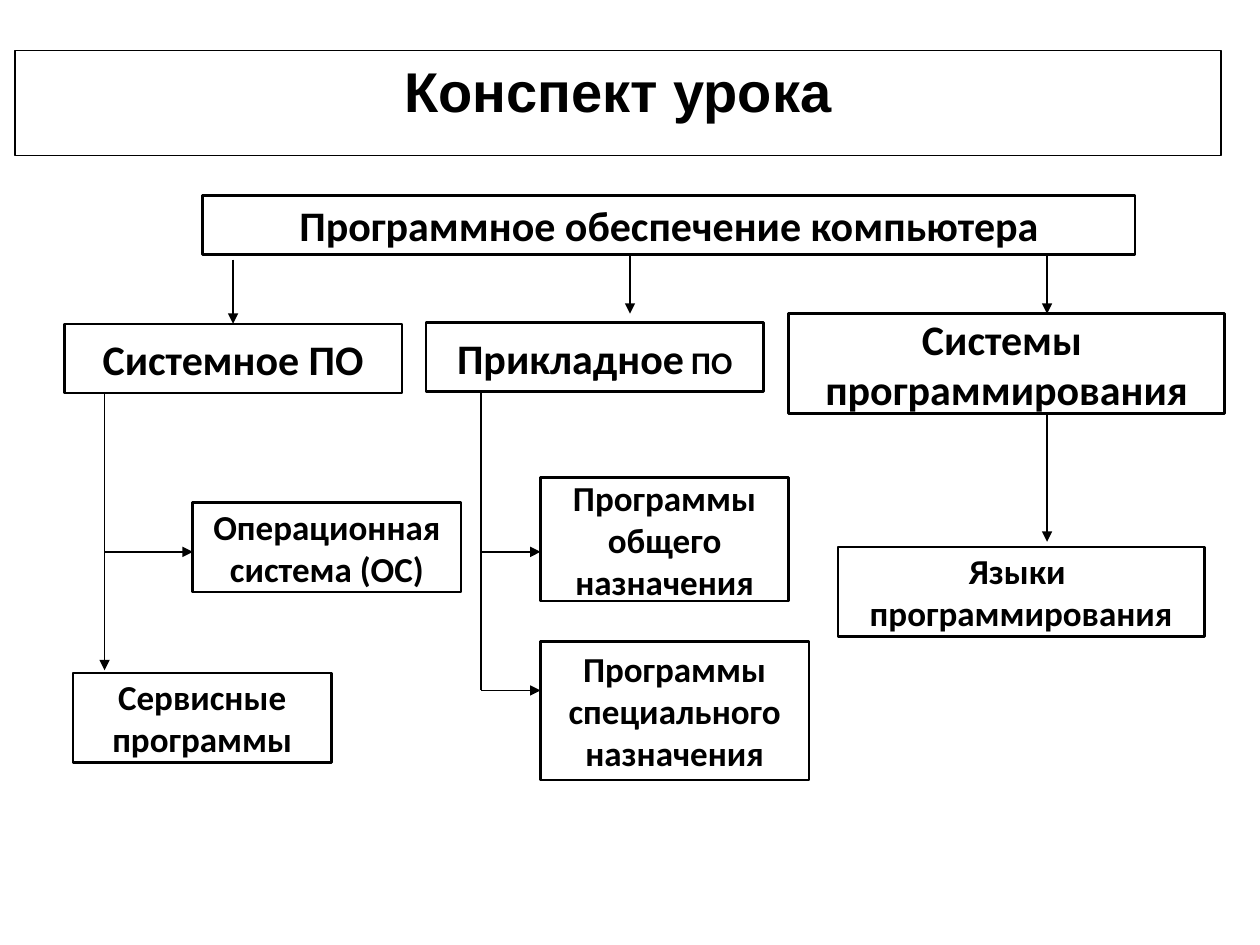
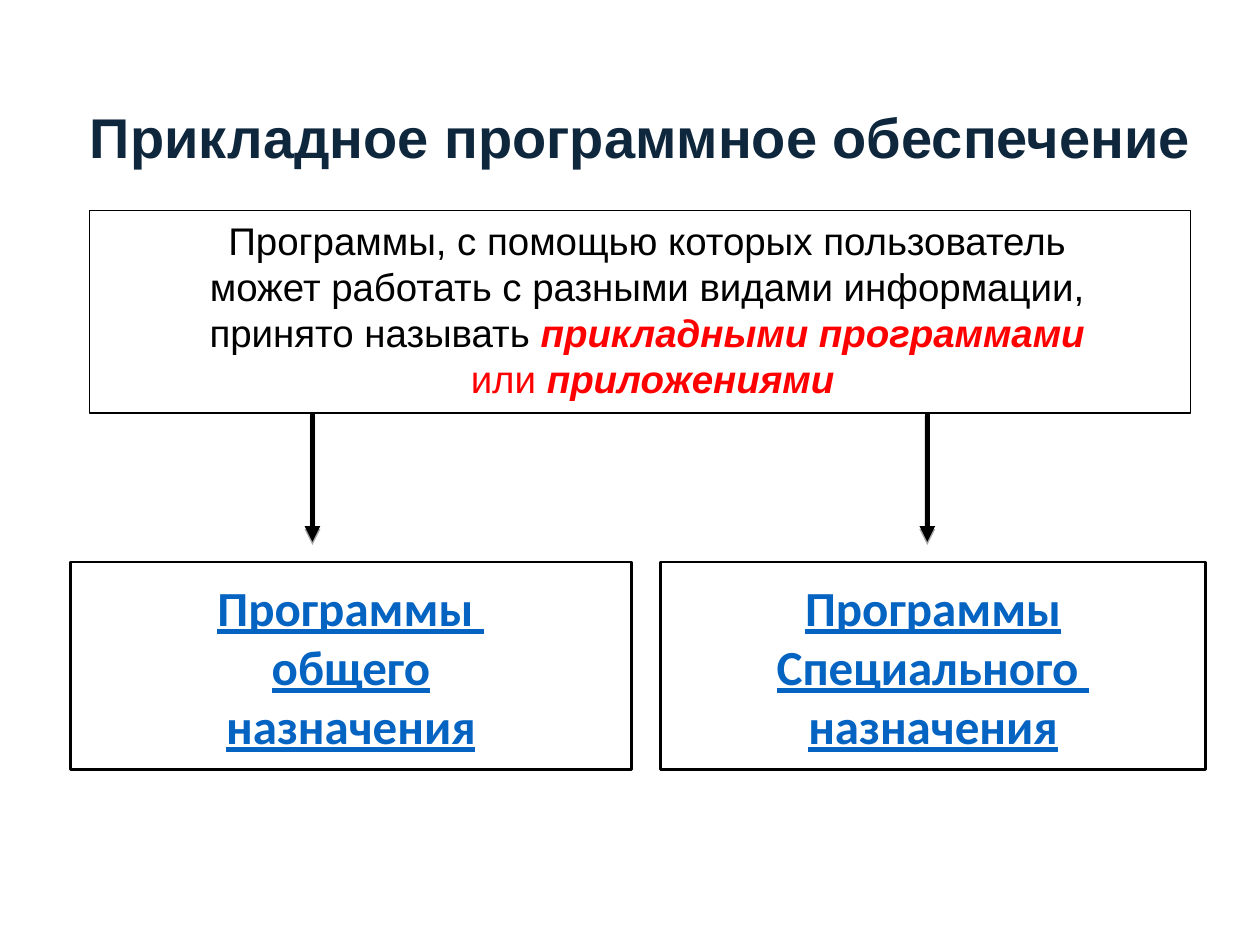
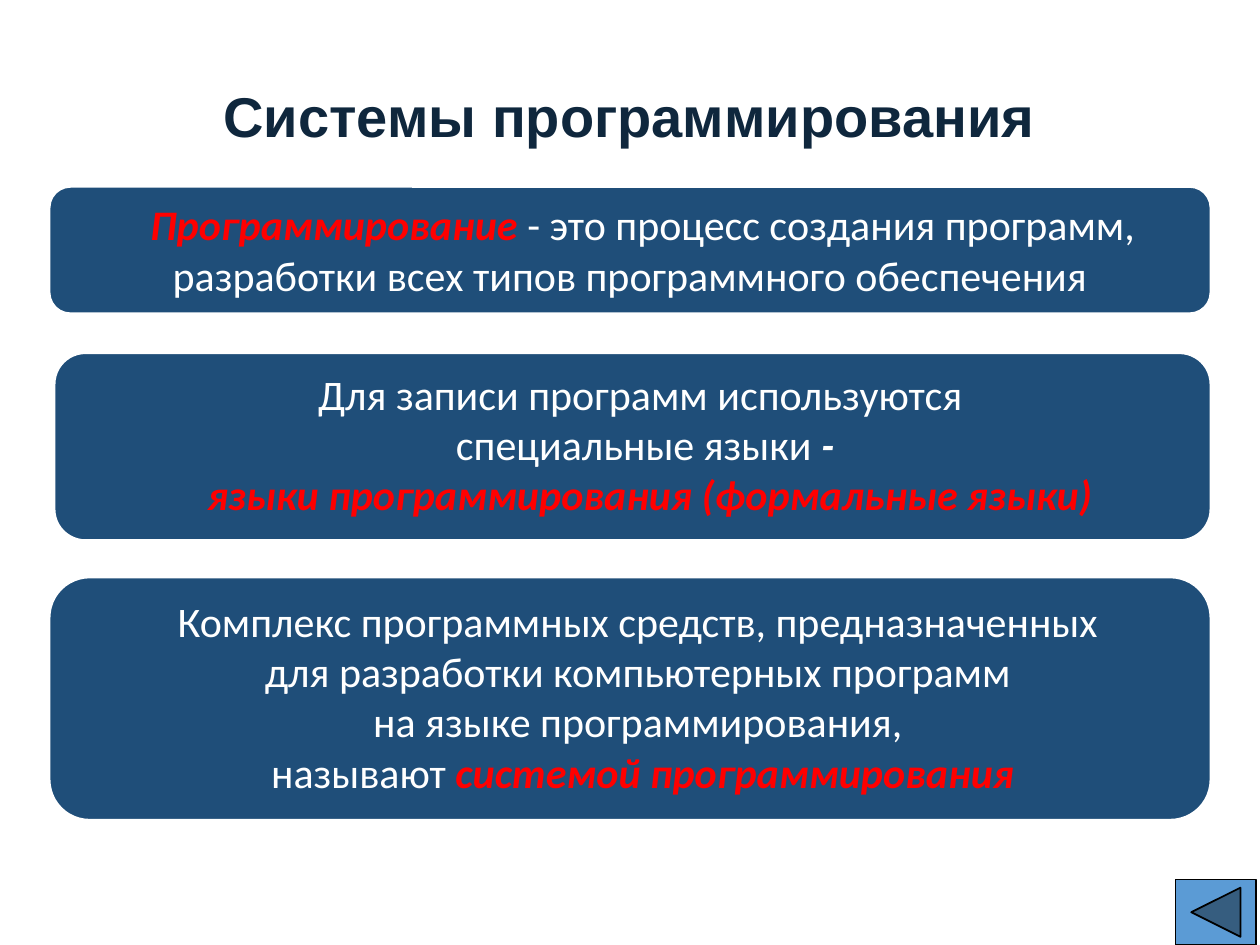
import pptx
import pptx.dml.color
import pptx.enum.shapes
import pptx.enum.text
import pptx.oxml
import pptx.oxml.ns
import pptx.util
from lxml import etree

WIDE, HIGH = pptx.util.Inches(10), pptx.util.Inches(7.5)
COLS, ROWS = 100, 75
BLACK, WHITE, RED = "000000", "FFFFFF", "FF0000"
NAVY, LINK, PANEL, BUTTON = "0F273D", "0563C1", "1F4E79", "5B9BD5"
KINDS = pptx.enum.shapes.MSO_SHAPE
FIT = pptx.enum.text.MSO_AUTO_SIZE
ANCHOR = pptx.enum.text.MSO_ANCHOR
CENTER = pptx.enum.text.PP_ALIGN.CENTER

TITLE = {"name": "Arial", "size": 32, "bold": True, "color": NAVY}
HEAD = {"name": "Calibri", "size": 24, "bold": True, "color": BLACK}
LEAF = {**HEAD, "size": 20}
JUMP = {**HEAD, "size": 28, "color": LINK, "underline": True}
BODY = {"name": "Arial", "size": 22, "color": BLACK}
NOTE = {"name": "Calibri", "size": 24, "color": WHITE}
TERM = {"color": RED, "bold": True, "italic": True}

FIXED = {"word_wrap": False, "vertical_anchor": ANCHOR.MIDDLE}
FLOW = {"word_wrap": True, "vertical_anchor": ANCHOR.TOP,
        "auto_size": FIT.SHAPE_TO_FIT_TEXT}


def col(n):
    return round(WIDE * n / COLS)


def row(n):
    return round(HIGH * n / ROWS)


def shade(code):
    return pptx.dml.color.RGBColor.from_string(code)


def apply(target, values):
    for key, value in values.items():
        setattr(target, key, value)


def style(font, look):
    font.color.rgb = shade(look["color"])
    apply(font, {key: value for key, value in look.items() if key != "color"}
          | {"size": pptx.util.Pt(look["size"])})


def edge(line, width, color=BLACK):
    line.color.rgb = shade(color)
    line.width = pptx.util.Pt(width)


def place(shape, x, y, w, h):
    apply(shape, {"left": col(x), "top": row(y), "width": col(w), "height": row(h)})


def write(shape, lines, look, frame, indent=0):
    body = shape.text_frame
    apply(body, frame)
    for i, line in enumerate(lines):
        para = body.paragraphs[0] if i == 0 else body.add_paragraph()
        para.alignment = CENTER
        if indent:
            para._p.get_or_add_pPr().set("indent", str(col(indent)))
        for part in [line] if isinstance(line, str) else line:
            words, extra = (part, {}) if isinstance(part, str) else part
            run = para.add_run()
            run.text = words
            style(run.font, {**look, **extra})


def box(slide, spot, width, fill=None, color=BLACK, kind=KINDS.RECTANGLE):
    x, y, w, h = spot
    shape = slide.shapes.add_shape(kind, col(x), row(y), col(w), row(h))
    shape.shadow.inherit = False
    if fill:
        shape.fill.solid()
        shape.fill.fore_color.rgb = shade(fill)
    else:
        shape.fill.background()
    edge(shape.line, width, color)
    return shape


def frame(slide, spot, lines, look):
    write(box(slide, spot, 1.5), lines, look, FIXED)


def link(slide, x1, y1, x2, y2, arrow=True, width=1, shadow=False):
    line = slide.shapes.add_connector(
        pptx.enum.shapes.MSO_CONNECTOR.STRAIGHT, col(x1), row(y1), col(x2), row(y2))
    edge(line.line, width)
    name = pptx.oxml.ns.qn
    props = line._element.spPr
    if arrow:
        etree.SubElement(props.find(name("a:ln")), name("a:tailEnd"), type="triangle")
    glow = etree.SubElement(props, name("a:effectLst"))
    if shadow:
        cast = etree.SubElement(glow, name("a:outerShdw"), blurRad="0",
                                dist=str(pptx.util.Pt(1.8)), dir="5400000", rotWithShape="0")
        tone = etree.SubElement(cast, name("a:srgbClr"), val=BLACK)
        etree.SubElement(tone, name("a:alpha"), val="35000")


def start(deck, text, spot, color=NAVY, wrap=False):
    slide = deck.slides.add_slide(deck.slide_layouts[5])
    title = slide.shapes.title
    place(title, *spot)
    write(title, [text], {**TITLE, "color": color}, {**FLOW, "word_wrap": wrap})
    return slide


def outline(deck):
    slide = start(deck, "Конспект урока", (1.2, 4, 95.7, 6.4), BLACK, True)
    edge(slide.shapes.title.line, 0.75)
    frame(slide, (16.1, 15.5, 74, 4.7), ["Программное обеспечение компьютера"], HEAD)
    frame(slide, (5.1, 25.7, 26.8, 5.5), ["Системное ПО"], HEAD)
    frame(slide, (33.8, 25.6, 26.8, 5.5), [["Прикладное", (" ПО", {"size": 18})]], HEAD)
    frame(slide, (62.6, 24.9, 34.6, 7.9), ["Системы ", "программирования"], HEAD)
    leaves = [
        ((15.3, 39.9, 21.3, 7.1), ["Операционная", "система (ОС)"]),
        ((5.8, 53.4, 20.5, 7.1), ["Сервисные", "программы"]),
        ((42.9, 37.9, 19.7, 9.8), ["Программы", "общего", "назначения"]),
        ((42.9, 50.9, 21.3, 11), ["Программы", "специального", "назначения"]),
        ((66.5, 43.4, 29.1, 7.1), ["Языки ", "программирования"]),
    ]
    for spot, lines in leaves:
        frame(slide, spot, lines, LEAF)
    for x, top, end in [(18.5, 20.6, 25.7), (50, 20.2, 24.9), (83.1, 20.2, 24.9),
                        (83.1, 32.8, 43), (8.3, 31.2, 53.2)]:
        link(slide, x, top, x, end)
    link(slide, 38.2, 31.2, 38.2, 54.8, arrow=False)
    for x, end, y in [(8.3, 15.3, 43.8), (38.2, 42.9, 43.8), (38.2, 42.9, 54.8)]:
        link(slide, x, y, end, y)


def applied(deck):
    slide = start(deck, "Прикладное программное обеспечение", (5.8, 7.6, 90.1, 6.4))
    write(box(slide, (7.1, 16.7, 87.4, 16.1), 1), [
        "Программы, с помощью которых пользователь ",
        "может работать с разными видами информации, ",
        ["принято называть ", ("прикладными программами ", TERM)],
        [("или ", {"color": RED}), ("приложениями", TERM)],
    ], BODY, FLOW, 2)
    for x, w, stem, lines in [
        (5.6, 44.5, 24.8, ["Программы ", "общего", "назначения"]),
        (52.4, 43.3, 73.6, ["Программы", "Специального ", "назначения"]),
    ]:
        frame(slide, (x, 44.6, w, 16.5), lines, JUMP)
        link(slide, stem, 32.8, stem, 43, width=3, shadow=True)


def systems(deck):
    slide = start(deck, "Системы программирования", (16.5, 6, 66.9, 6.4))
    panels = [
        ((3.9, 14.8, 92.2, 10.1), [
            [("Программирование ", TERM),
             "- это процесс создания программ, разработки всех типов программного обеспечения"],
        ]),
        ((4.3, 28, 91.8, 14.9), [
            "Для записи программ используются ",
            ["специальные языки", (" -", {"bold": True, "italic": True})],
            [(" языки программирования (формальные языки)", TERM)],
        ]),
        ((3.9, 45.8, 92.2, 19.3), [
            "Комплекс программных средств, предназначенных ",
            "для разработки компьютерных программ ",
            "на языке программирования, ",
            ["называют ", ("системой программирования", TERM)],
        ]),
    ]
    for spot, lines in panels:
        panel = box(slide, spot, 1.5, PANEL, WHITE, KINDS.ROUNDED_RECTANGLE)
        write(panel, lines, NOTE, FLOW, 2)
    box(slide, (93.3, 69.8, 6.4, 5.2), 1, BUTTON,
        kind=KINDS.ACTION_BUTTON_BACK_OR_PREVIOUS)


def main():
    deck = pptx.Presentation()
    apply(deck, {"slide_width": WIDE, "slide_height": HIGH})
    for build in (outline, applied, systems):
        build(deck)
    deck.save("out.pptx")


if __name__ == "__main__":
    main()
